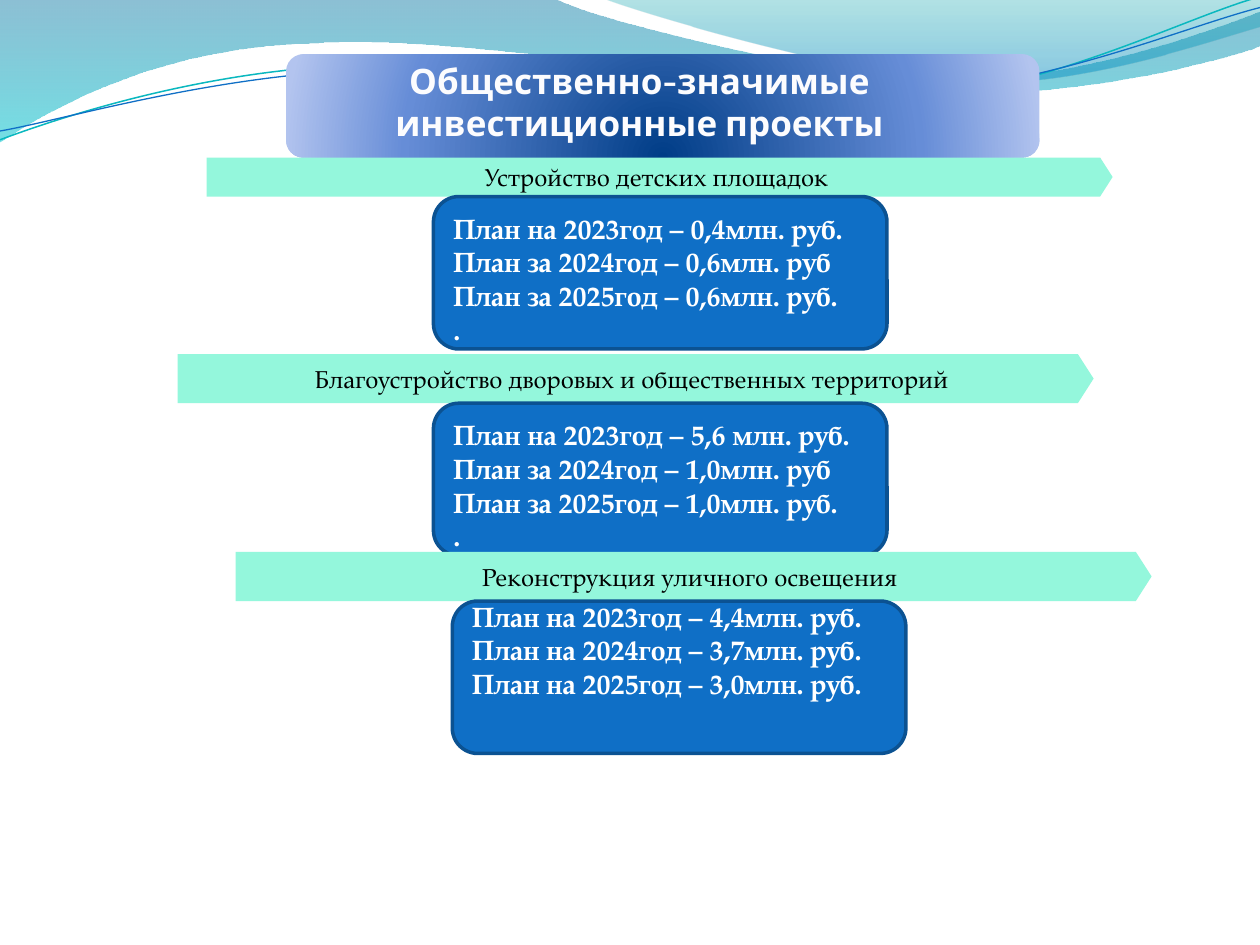
from lxml.etree import SubElement
from pptx import Presentation
from pptx.dml.color import RGBColor
from pptx.enum.shapes import MSO_SHAPE
from pptx.enum.text import MSO_ANCHOR, PP_ALIGN
from pptx.oxml import parse_xml
from pptx.oxml.ns import nsdecls, qn
from pptx.util import Inches, Pt

WIDTH, HEIGHT = 10, 7.5
FONT = "TeX Gyre Pagella"
COLORS = {
    "bar": "94F7DC", "bar_text": "000000",
    "card": "0F6FC6", "card_line": "0B5292", "card_text": "FFFFFF",
    "title": "FCFCFE", "teal_line": "0AB8BF", "blue_line": "0F6FC6",
}

# Content: bar text, bar left/top/width/height, card left, plan lines,
# space in points before the closing dot
TITLE = "Общественно-значимые инвестиционные проекты"
PROJECTS = [
    ("Устройство детских площадок", (1.64, 1.25, 7.19, 0.31), 3.44,
     ["План на 2023год – 0,4млн. руб.", "План за 2024год – 0,6млн. руб",
      "План за 2025год – 0,6млн. руб.", "."], 0),
    ("Благоустройство дворовых и общественных территорий",
     (1.41, 2.81, 7.27, 0.39), 3.44,
     ["План на 2023год – 5,6 млн. руб.", "План за 2024год – 1,0млн. руб",
      "План за 2025год – 1,0млн. руб.", "."], 0),
    ("Реконструкция уличного освещения", (1.87, 4.38, 7.27, 0.39), 3.59,
     ["План на 2023год – 4,4млн. руб.", "План на 2024год – 3,7млн. руб.",
      "План на 2025год – 3,0млн. руб.", "."], 19),
]
CARD_SIZE = (3.6, 1.21)

# Gradients: (position, colour, opacity) in percent
VERTICAL = '<a:lin ang="5400000" scaled="1"/>'
RADIAL = ('<a:path path="circle"><a:fillToRect l="50000" t="130000" '
          'r="50000" b="-30000"/></a:path>')
BANNER_STOPS = [(0, "003D87", 100), (68, "668DD7", 100), (100, "B3C4EF", 100)]

# Waves: two numbers make a line, six numbers make a cubic curve
WAVES = [
    ((0, 0), [(4.4, -0.01), (4.76, 0.17, 6.64, 0.63, 7.58, 0.63),
              (8.53, 0.63, 9.58, 0.26, 10, 0.09), (10.01, 0.36),
              (9.83, 0.44, 8.7, 0.76, 7.46, 0.75),
              (6.22, 0.75, 3.82, 0.28, 2.57, 0.34),
              (1.29, 0.36, 0.46, 0.83, -0.01, 1.13)],
     [(0, "0074A1", 45), (100, "00C6CF", 55)]),
    ((4.79, -0.01), [(5.09, 0.11, 6.82, 0.62, 7.69, 0.65),
                     (8.56, 0.69, 9.61, 0.32, 10, 0.21), (10, 0)],
     [(0, "00A1A9", 30), (80, "008BBF", 45)]),
]
WAVE_LINES = [
    ((0, 1.11), [(0.48, 0.93, 1.58, 0.57, 2.77, 0.52),
                 (3.95, 0.47, 5.93, 0.89, 7.13, 0.8),
                 (8.33, 0.71, 9.38, 0.15, 9.98, -0.02)], "teal_line", 0.85),
    ((0, 1.04), [(0.47, 0.96, 1.64, 0.61, 2.83, 0.56),
                 (4.03, 0.51, 5.97, 0.84, 7.17, 0.75),
                 (8.36, 0.67, 9.41, 0.21, 10, 0.06)], "blue_line", 0.75),
]


def color(name):
    return RGBColor.from_string(COLORS[name])


def add_outline(slide, start, segments, close):
    """Draw the points as lines, then join each group of three into a curve."""
    builder = slide.shapes.build_freeform(*map(Inches, start), scale=1.0)
    for segment in segments:
        values = [Inches(value) for value in segment]
        builder.add_line_segments(list(zip(values[::2], values[1::2])), close=False)
    if close:
        builder.add_line_segments([], close=True)
    shape = builder.convert_to_shape()
    shape.shadow.inherit = False
    lines = iter(list(shape._element.iter(qn("a:lnTo"))))
    for segment in segments:
        group = [next(lines) for _ in range(len(segment) // 2)]
        if len(group) == 3:
            curve = parse_xml(f'<a:cubicBezTo {nsdecls("a")}/>')
            group[0].addprevious(curve)
            for line in group:
                curve.append(line[0])
                line.getparent().remove(line)
    return shape


def set_gradient(shape, stops, direction):
    shape.fill.background()
    no_fill = shape._element.spPr.find(qn("a:noFill"))
    gradient = parse_xml(f'<a:gradFill {nsdecls("a")} rotWithShape="1">'
                         f'<a:gsLst/>{direction}</a:gradFill>')
    for position, value, opacity in stops:
        stop = SubElement(gradient[0], qn("a:gs"), pos=str(position * 1000))
        stop_color = SubElement(stop, qn("a:srgbClr"), val=value)
        if opacity < 100:
            SubElement(stop_color, qn("a:alpha"), val=str(opacity * 1000))
    no_fill.getparent().replace(no_fill, gradient)


def add_box(slide, kind, place, fill=None, line=None):
    shape = slide.shapes.add_shape(kind, *map(Inches, place))
    shape.shadow.inherit = False
    if fill:
        shape.fill.solid()
        shape.fill.fore_color.rgb = color(fill)
    if line:
        shape.line.color.rgb = color(line)
        shape.line.width = Pt(2)
    else:
        shape.line.fill.background()
    return shape


def write_text(shape, lines, size, fill, font=FONT, bold=False, align=PP_ALIGN.LEFT,
               anchor=MSO_ANCHOR.MIDDLE, top_inset=0, last_gap=0):
    frame = shape.text_frame
    frame.word_wrap = True
    frame.vertical_anchor = anchor
    frame.margin_left = frame.margin_right = Inches(0.1)
    frame.margin_top, frame.margin_bottom = Inches(top_inset), 0
    for index, line in enumerate(lines):
        paragraph = frame.add_paragraph() if index else frame.paragraphs[0]
        paragraph.alignment = align
        paragraph.line_spacing = 1.0
        paragraph.space_before = Pt(0)
        run = paragraph.add_run()
        run.text = line
        run.font.name, run.font.size, run.font.bold = font, Pt(size), bold
        run.font.color.rgb = color(fill)
    paragraph.space_before = Pt(last_gap)


def main():
    presentation = Presentation()
    presentation.slide_width, presentation.slide_height = Inches(WIDTH), Inches(HEIGHT)
    slide = presentation.slides.add_slide(presentation.slide_layouts[5])

    # Waves along the top edge
    for start, segments, stops in WAVES:
        wave = add_outline(slide, start, segments, True)
        set_gradient(wave, stops, VERTICAL)
        wave.line.fill.background()
    for start, segments, name, width in WAVE_LINES:
        wave = add_outline(slide, start, segments, False)
        wave.fill.background()
        wave.line.color.rgb = color(name)
        wave.line.width = Pt(width)

    # Banner with the title in front of it
    banner = add_box(slide, MSO_SHAPE.ROUNDED_RECTANGLE, (2.27, 0.43, 5.98, 0.82))
    set_gradient(banner, BANNER_STOPS, RADIAL)
    title = slide.shapes.title
    title.left, title.top, title.width, title.height = map(Inches, (2.25, 0.41, 5.65, 0.77))
    write_text(title, [TITLE], 20, "title", font="Cabin", bold=True,
               align=PP_ALIGN.CENTER, anchor=MSO_ANCHOR.TOP, top_inset=0.06)
    slide.shapes._spTree.append(title._element)

    # Each project: an arrow bar with its plan card right below
    for name, place, card_left, plans, last_gap in PROJECTS:
        bar = add_box(slide, MSO_SHAPE.PENTAGON, place, "bar")
        bar.adjustments[0] = 0.32
        write_text(bar, [name], 14, "bar_text", align=PP_ALIGN.CENTER)
        card_top = place[1] + place[3]
        card = add_box(slide, MSO_SHAPE.ROUNDED_RECTANGLE,
                       (card_left, card_top, *CARD_SIZE), "card", "card_line")
        write_text(card, plans, 16, "card_text", bold=True, top_inset=0.09,
                   last_gap=last_gap)

    presentation.save("out.pptx")


if __name__ == "__main__":
    main()
